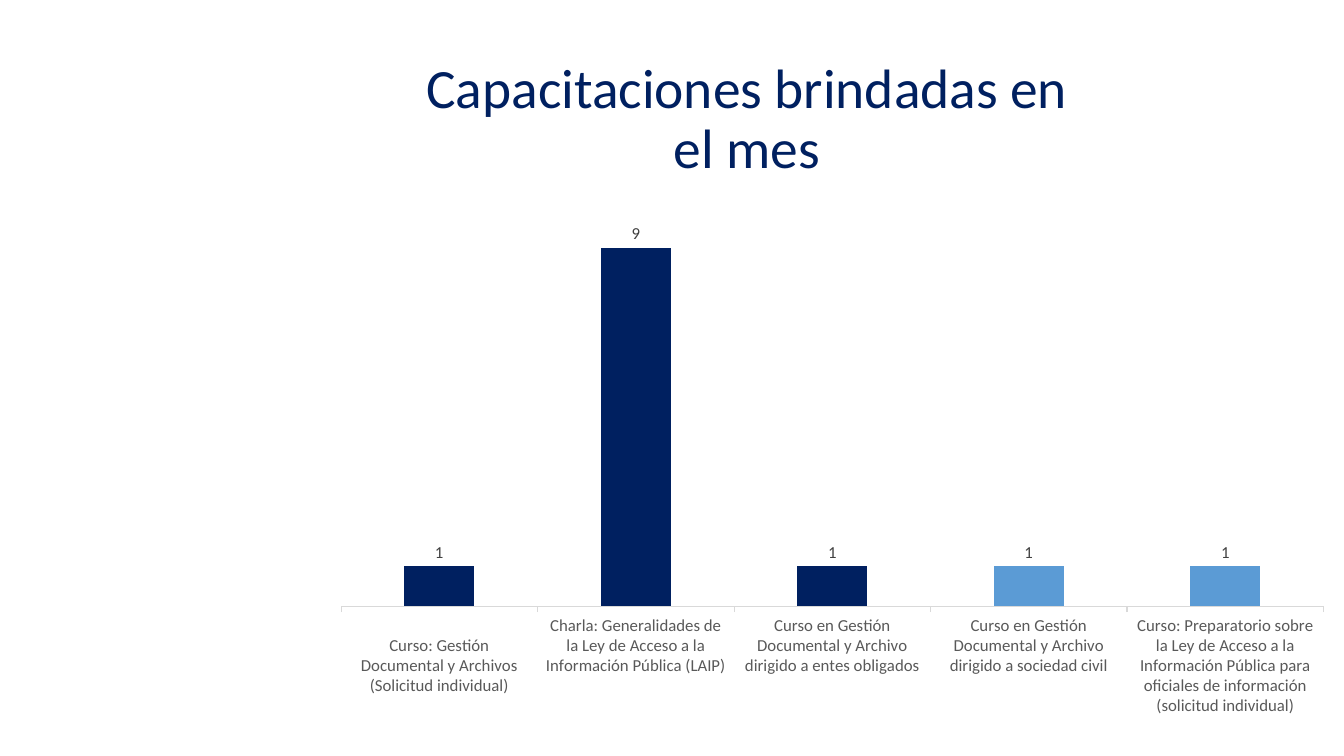
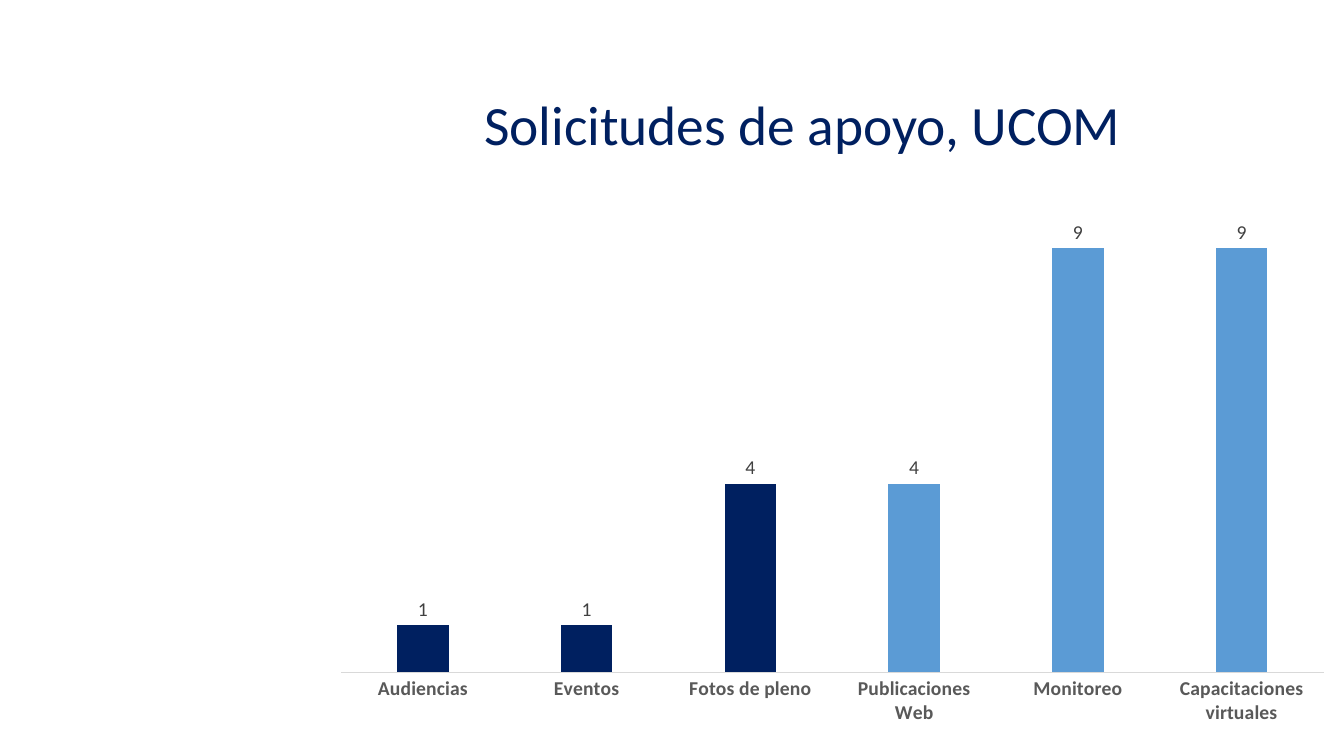
from dataclasses import dataclass

from pptx import Presentation
from pptx.chart.data import CategoryChartData
from pptx.dml.color import RGBColor
from pptx.enum import chart as charts, text as texts
from pptx.util import Pt


@dataclass(frozen=True)
class Theme:
    font: str = "Calibri"
    navy: str = "002060"
    blue: str = "5B9BD5"
    axis_line: str = "D9D9D9"
    axis_text: str = "595959"
    value_text: str = "404040"
    title_size: float = 39.6
    axis_width: float = 0.75


THEME = Theme()


def style_font(font, size, color, bold=False):
    font.name = THEME.font
    font.size = Pt(size)
    font.bold = bold
    font.color.rgb = RGBColor.from_string(color)


def write(frame, content, *, size, color, bold=False,
          align=texts.PP_ALIGN.CENTER, spacing=0.9):
    frame.text = content
    paragraph = frame.paragraphs[0]
    paragraph.alignment = align
    paragraph.line_spacing = spacing
    style_font(paragraph.runs[0].font, size, color, bold)


class Deck:
    """Holds the presentation and the slide being built."""

    TITLE_SIZE = (485.28, 88.56)
    CHART_LEFT, CHART_WIDTH = 229, 731

    def __init__(self):
        self.presentation = Presentation()
        self.presentation.slide_width = Pt(960)
        self.presentation.slide_height = Pt(540)
        self.slide = None

    def add_slide(self, heading, left, top):
        layout = self.presentation.slide_layouts.get_by_name("Title Only")
        self.slide = self.presentation.slides.add_slide(layout)
        title = self.slide.shapes.title
        title.left, title.top = Pt(left), Pt(top)
        title.width, title.height = map(Pt, self.TITLE_SIZE)
        frame = title.text_frame
        frame.word_wrap = True
        frame.auto_size = texts.MSO_AUTO_SIZE.NONE
        frame.vertical_anchor = texts.MSO_ANCHOR.MIDDLE
        write(frame, heading, size=THEME.title_size, color=THEME.navy)

    def add_columns(self, counts, *, top, height, size, gap, overlap=0,
                    bold=False, ticks=False, highlighted=3):
        """Draw counts as columns, the first highlighted ones in navy."""
        data = CategoryChartData()
        data.categories = list(counts)
        data.add_series("Series 1", list(counts.values()))
        chart = self.slide.shapes.add_chart(
            charts.XL_CHART_TYPE.COLUMN_CLUSTERED, Pt(self.CHART_LEFT),
            Pt(top), Pt(self.CHART_WIDTH), Pt(height), data).chart
        chart.has_title = chart.has_legend = False
        style_font(chart.font, size, "000000")
        self.format_axes(chart, size, bold, ticks)

        plot = chart.plots[0]
        plot.vary_by_categories = False
        plot.gap_width, plot.overlap = gap, overlap
        plot.has_data_labels = True
        plot.data_labels.show_value = True
        plot.data_labels.position = charts.XL_LABEL_POSITION.OUTSIDE_END
        style_font(plot.data_labels.font, size, THEME.value_text)

        series = plot.series[0]
        columns = [series.points[i] for i in range(highlighted)]
        for item, color in [(series, THEME.blue)] + [
                (column, THEME.navy) for column in columns]:
            item.format.fill.solid()
            item.format.fill.fore_color.rgb = RGBColor.from_string(color)

    @staticmethod
    def format_axes(chart, size, bold, ticks):
        values = chart.value_axis
        values.visible = False
        values.has_major_gridlines = False
        values.minimum_scale, values.maximum_scale = 0, 10

        categories = chart.category_axis
        marks = charts.XL_TICK_MARK
        categories.major_tick_mark = marks.OUTSIDE if ticks else marks.NONE
        categories.minor_tick_mark = marks.NONE
        style_font(categories.tick_labels.font, size, THEME.axis_text, bold)
        line = categories.format.line
        line.color.rgb = RGBColor.from_string(THEME.axis_line)
        line.width = Pt(THEME.axis_width)


def main():
    trainings = {
        "\nCurso: Gestión Documental y Archivos (Solicitud individual)": 1,
        "Charla: Generalidades de la Ley de Acceso a la Información Pública (LAIP)": 9,
        "Curso en Gestión Documental y Archivo dirigido a entes obligados": 1,
        "Curso en Gestión Documental y Archivo dirigido a sociedad civil": 1,
        "Curso: Preparatorio sobre la Ley de Acceso a la Información Pública "
        "para oficiales de información (solicitud individual)": 1,
    }
    requests = {
        "Audiencias": 1,
        "Eventos": 1,
        "Fotos de pleno": 4,
        "Publicaciones Web": 4,
        "Monitoreo": 9,
        "Capacitaciones virtuales": 9,
    }
    deck = Deck()
    deck.add_slide("Capacitaciones brindadas en el mes", 290.88, 41.76)
    deck.add_columns(trainings, top=141, height=378, size=12, gap=182, ticks=True)
    deck.add_slide("Solicitudes de apoyo, UCOM", 330.48, 46.8)
    deck.add_columns(requests, top=136, height=389.5, size=14, gap=219,
                     overlap=-27, bold=True)
    deck.presentation.save("out.pptx")


if __name__ == "__main__":
    main()
